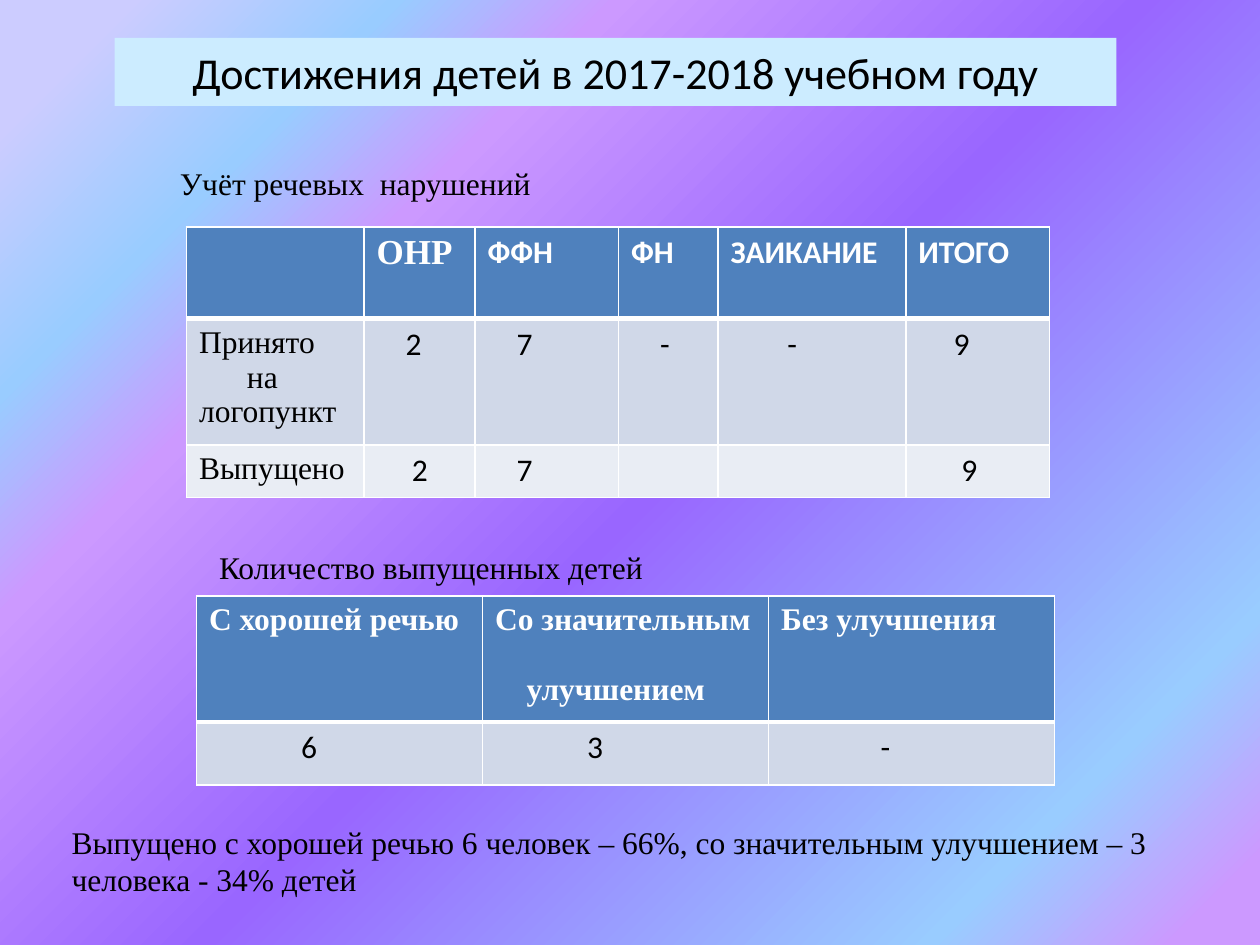
from dataclasses import dataclass

from lxml import etree
from pptx import Presentation
from pptx.dml.color import RGBColor
from pptx.enum.text import MSO_ANCHOR, MSO_AUTO_SIZE, PP_ALIGN
from pptx.oxml.ns import qn
from pptx.util import Inches, Pt

CENTER = PP_ALIGN.CENTER
MIDDLE = MSO_ANCHOR.MIDDLE
NO_FIT = MSO_AUTO_SIZE.NONE
GROW = MSO_AUTO_SIZE.SHAPE_TO_FIT_TEXT


@dataclass(frozen=True)
class Theme:
    sans: str = "Calibri"
    serif: str = "Times New Roman"
    title_size: float = 25.2
    text_size: float = 18
    large_size: float = 20
    text: str = "000000"
    header_text: str = "FFFFFF"
    title_fill: str = "CCECFF"
    header_fill: str = "4F81BD"
    bands: tuple = ("D0D8E8", "E9EDF4")
    border: str = "FFFFFF"
    thin: float = 1
    thick: float = 3
    gradient: tuple = ((4, "CC99FF"), (15, "99CCFF"), (48, "9966FF"),
                       (72, "CC99FF"), (82, "99CCFF"), (94, "CCCCFF"))
    gradient_angle: float = 135


THEME = Theme()


@dataclass(frozen=True)
class Cell:
    """Text of a table cell; indent (inches) and gap (points) shape its last paragraph."""
    text: str = ""
    indent: float = 0
    font: str = THEME.sans
    size: float = THEME.text_size
    gap: float = 0


class SlideBuilder:
    def __init__(self, page, theme):
        self.page = page
        self.theme = theme

    def background(self):
        fill = self.page.background.fill
        fill.gradient()
        fill.gradient_angle = self.theme.gradient_angle
        stops = next(self.page.element.iter(qn("a:gsLst")))
        for stop in list(stops):
            stops.remove(stop)
        for position, color in self.theme.gradient:
            stop = etree.SubElement(stops, qn("a:gs"), pos=str(position * 1000))
            etree.SubElement(stop, qn("a:srgbClr"), val=color)

    def style(self, para, name, size, color, bold=False):
        font = para.font
        font.name, font.size, font.bold = name, Pt(size), bold
        font.color.rgb = RGBColor.from_string(color)

    def title(self, text, left, top, width, height):
        box = self.page.shapes.title
        box.left, box.top = Inches(left), Inches(top)
        box.width, box.height = Inches(width), Inches(height)
        box.fill.solid()
        box.fill.fore_color.rgb = RGBColor.from_string(self.theme.title_fill)
        frame = box.text_frame
        frame.text = text
        frame.auto_size = NO_FIT
        frame.vertical_anchor = MIDDLE
        para = frame.paragraphs[0]
        para.alignment = CENTER
        self.style(para, self.theme.sans, self.theme.title_size, self.theme.text)

    def text(self, text, left, top, width, height, wrap=True):
        box = self.page.shapes.add_textbox(
            Inches(left), Inches(top), Inches(width), Inches(height))
        frame = box.text_frame
        frame.text = text
        frame.word_wrap = wrap
        frame.auto_size = GROW
        self.style(frame.paragraphs[0], self.theme.serif,
                   self.theme.text_size, self.theme.text)

    def borders(self, cell, top, bottom):
        properties = cell._tc.get_or_add_tcPr()
        thin = self.theme.thin
        for side, width in zip("LRTB", (thin, thin, top, bottom)):
            line = etree.SubElement(properties, qn(f"a:ln{side}"), w=str(Pt(width)))
            fill = etree.SubElement(line, qn("a:solidFill"))
            etree.SubElement(fill, qn("a:srgbClr"), val=self.theme.border)

    def fill_cell(self, cell, content, row):
        theme = self.theme
        header = row == 0
        self.borders(cell, theme.thick if row == 1 else theme.thin,
                     theme.thick if header else theme.thin)
        cell.fill.solid()
        cell.fill.fore_color.rgb = RGBColor.from_string(
            theme.header_fill if header else theme.bands[(row - 1) % 2])
        cell.text = content.text
        for para in cell.text_frame.paragraphs:
            self.style(para, content.font, content.size,
                       theme.header_text if header else theme.text, header)
        para.space_before = Pt(content.gap)
        para._p.get_or_add_pPr().set("indent", str(Inches(content.indent)))

    def table(self, left, top, widths, heights, rows):
        table = self.page.shapes.add_table(
            len(heights), len(widths), Inches(left), Inches(top),
            Inches(sum(widths)), Inches(sum(heights))).table
        for column, width in zip(table.columns, widths):
            column.width = Inches(width)
        for row, height in zip(table.rows, heights):
            row.height = Inches(height)
        for r, contents in enumerate(rows):
            for c, content in enumerate(contents):
                self.fill_cell(table.cell(r, c), content, r)


def main():
    deck = Presentation()
    deck.slide_width, deck.slide_height = Inches(10), Inches(7.5)
    page = deck.slides.add_slide(deck.slide_layouts[5])
    slide = SlideBuilder(page, THEME)
    serif = THEME.serif

    slide.background()
    slide.title("Достижения детей в 2017-2018 учебном году", 0.91, 0.3, 7.95, 0.54)

    slide.text("Учёт речевых  нарушений", 1.33, 1.25, 3.01, 0.4, wrap=False)
    disorders = [
        [Cell(), Cell("ОНР", font=serif, size=THEME.large_size),
         Cell("ФФН"), Cell("ФН"), Cell("ЗАИКАНИЕ"), Cell("ИТОГО")],
        [Cell("Принято\nна логопункт", 0.38, serif), Cell("2", 0.23),
         Cell("7", 0.23), Cell("-", 0.23), Cell("-", 0.45), Cell("9", 0.28)],
        [Cell("Выпущено", font=serif), Cell("2", 0.28), Cell("7", 0.23),
         Cell(), Cell(), Cell("9", 0.34)],
    ]
    slide.table(1.48, 1.8, [1.41, 0.88, 1.14, 0.79, 1.49, 1.14],
                [0.73, 1, 0.42], disorders)

    slide.text("Количество выпущенных детей", 1.64, 4.3, 6.02, 0.4)
    results = [
        [Cell("С хорошей речью", font=serif),
         Cell("Со значительным\nулучшением", 0.25, serif, gap=20),
         Cell("Без улучшения", font=serif)],
        [Cell("6", 0.73), Cell("3", 0.73), Cell("-", 0.79)],
    ]
    slide.table(1.56, 4.73, [2.27] * 3, [1, 0.5], results)

    slide.text("Выпущено с хорошей речью 6 человек – 66%, со значительным "
               "улучшением – 3 человека - 34% детей", 0.47, 6.48, 9.54, 0.71)
    deck.save("out.pptx")


if __name__ == "__main__":
    main()
